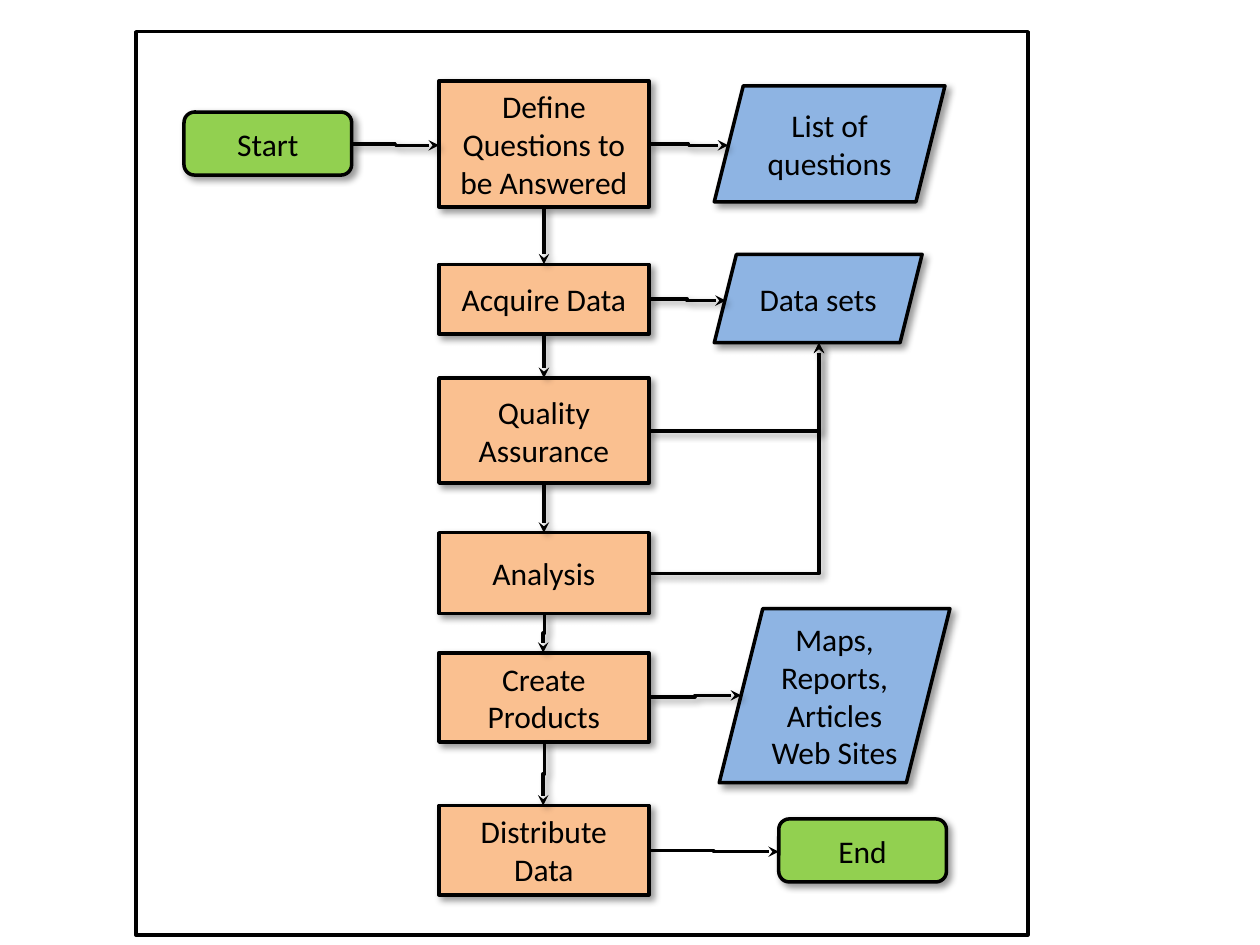
import pptx
import pptx.util
import pptx.dml.color
import pptx.enum.shapes
import pptx.enum.text
import pptx.oxml
import pptx.oxml.ns

Cm = pptx.util.Cm
Pt = pptx.util.Pt
Color = pptx.dml.color.RGBColor
Kind = pptx.enum.shapes.MSO_SHAPE
qn = pptx.oxml.ns.qn

BLACK = Color(0x00, 0x00, 0x00)
ORANGE = Color(0xFA, 0xC0, 0x90)
BLUE = Color(0x8E, 0xB4, 0xE3)
GREEN = Color(0x92, 0xD0, 0x50)

SPACE = pptx.oxml.ns.nsdecls("a")
SHADOW = (
    f'<a:effectLst {SPACE}><a:outerShdw blurRad="{Pt(4)}" dist="{Pt(3)}" '
    'dir="2700000" algn="tl" rotWithShape="0"><a:srgbClr val="000000">'
    '<a:alpha val="40000"/></a:srgbClr></a:outerShdw></a:effectLst>'
)
EMPTY = f"<a:effectLst {SPACE}/>"
ARROW = f'<a:tailEnd {SPACE} type="stealth"/>'


def write(frame, text, size=18, font="Calibri", color=BLACK):
    frame.word_wrap = True
    frame.vertical_anchor = pptx.enum.text.MSO_ANCHOR.MIDDLE
    frame.text = text
    for para in frame.paragraphs:
        para.alignment = pptx.enum.text.PP_ALIGN.CENTER
        para.font.size = Pt(size)
        para.font.name = font
        para.font.color.rgb = color


class Chart:
    def __init__(self, slide, ink=BLACK, width=2):
        self.slide = slide
        self.ink = ink
        self.width = width

    def stroke(self, item):
        item.line.color.rgb = self.ink
        item.line.width = Pt(self.width)

    def box(self, kind, fill, text, left, top, width, height):
        item = self.slide.shapes.add_shape(
            kind, Cm(left), Cm(top), Cm(width), Cm(height))
        item.shadow.inherit = False
        item.fill.solid()
        item.fill.fore_color.rgb = fill
        self.stroke(item)
        part = item.element.find(qn("p:spPr"))
        part.remove(part.find(qn("a:effectLst")))
        part.append(pptx.oxml.parse_xml(SHADOW))
        write(item.text_frame, text)

    def border(self, left, top, width, height):
        item = self.slide.shapes.add_shape(
            Kind.RECTANGLE, Cm(left), Cm(top), Cm(width), Cm(height))
        item.shadow.inherit = False
        item.fill.background()
        self.stroke(item)

    def link(self, x1, y1, x2, y2, form="bentConnector3", turn=0, shade=True):
        item = self.slide.shapes.add_connector(
            pptx.enum.shapes.MSO_CONNECTOR.ELBOW,
            Cm(x1), Cm(y1), Cm(x2), Cm(y2))
        self.stroke(item)
        part = item.element.find(qn("p:spPr"))
        part.find(qn("a:prstGeom")).set("prst", form)
        if turn:
            part.find(qn("a:xfrm")).set("rot", str(turn * 60000))
        part.find(qn("a:ln")).append(pptx.oxml.parse_xml(ARROW))
        part.append(pptx.oxml.parse_xml(SHADOW if shade else EMPTY))

    def drop(self, x, top, base, shift=0):
        half = (base - top) / 2
        mid = (top + base) / 2
        self.link(x - half, mid - shift / 2, x + half, mid + shift / 2, turn=90)


STEP_X, STEP_W = 8.85, 4.23
EDGE = STEP_X + STEP_W
STEPS = [
    ("Define Questions to be Answered", 1.63, 2.54, 0),
    ("Acquire Data", 5.33, 1.4, 0),
    ("Quality Assurance", 7.62, 2.12, 0),
    ("Analysis", 10.74, 1.63, 0.03),
    ("Create\nProducts", 13.16, 1.8, 0.03),
    ("Distribute Data", 16.24, 1.8, 0),
]
RESULTS = [
    ("List of questions", 14.4, 1.73, 4.65, 2.34),
    ("Data sets", 14.4, 5.13, 4.19, 1.78),
    ("Maps, Reports, Articles Web Sites", 14.5, 12.27, 4.65, 3.51),
]
ENDS = [("Start", 3.71, 2.26), ("End", 15.7, 16.51)]
LINKS = [
    (7.09, 2.9, STEP_X, 2.93),
    (EDGE, 2.9, 14.68, 2.93),
    (EDGE, 6.03, 14.63, 6.06),
    (EDGE, 14.05, 14.94, 14.02),
]


def main():
    deck = pptx.Presentation()
    deck.slide_width = Cm(25.4)
    deck.slide_height = Cm(19.05)
    chart = Chart(deck.slides.add_slide(deck.slide_layouts[6]))

    for text, top, height, _ in STEPS:
        chart.box(Kind.RECTANGLE, ORANGE, text, STEP_X, top, STEP_W, height)
    for place in RESULTS:
        chart.box(Kind.PARALLELOGRAM, BLUE, *place)
    for text, left, top in ENDS:
        chart.box(Kind.ROUNDED_RECTANGLE, GREEN, text, left, top, 3.38, 1.27)

    for (_, top, height, shift), after in zip(STEPS, STEPS[1:]):
        chart.drop(STEP_X + STEP_W / 2, top + height, after[1], shift)
    for ends in LINKS:
        chart.link(*ends)
    chart.link(EDGE, 17.15, 15.7, 17.17, shade=False)
    for y in (8.69, 11.56):
        chart.link(EDGE, y, 16.51, 6.91, form="bentConnector2")

    chart.border(2.74, 0.64, 17.98, 18.21)
    deck.save("out.pptx")


if __name__ == "__main__":
    main()
